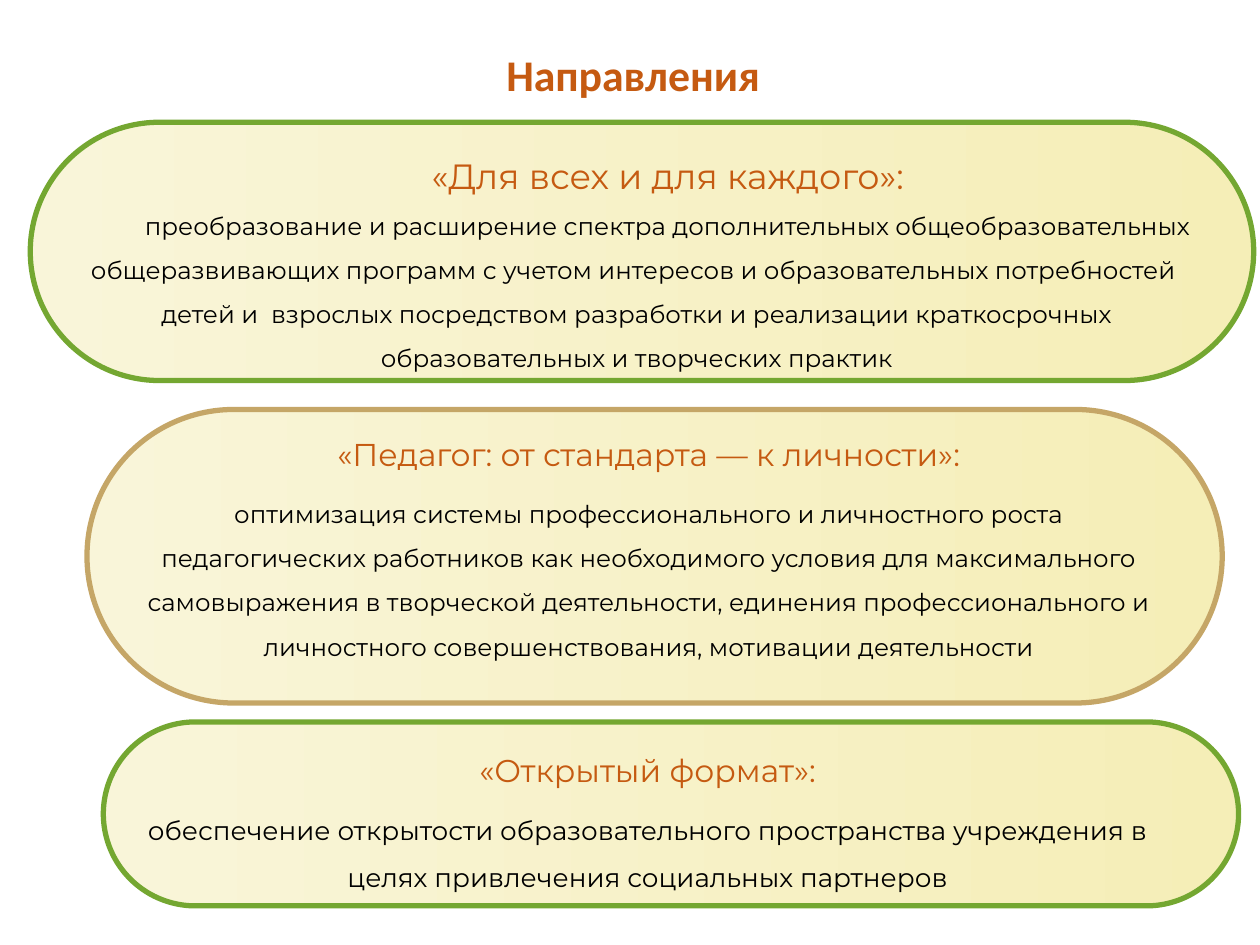
from pptx import Presentation
from pptx import util as u
from pptx.dml.color import RGBColor
from pptx.enum import shapes, text

ORANGE = RGBColor(0xC5, 0x5A, 0x11)
GREEN = RGBColor(0x74, 0xA7, 0x31)
SAND = RGBColor(0xC5, 0xA6, 0x67)
BLACK = RGBColor(0, 0, 0)
CREAM = RGBColor(0xF9, 0xF5, 0xD9)
YELLOW = RGBColor(0xF5, 0xEE, 0xB7)


class SlideBuilder:
    """Holds the style and the current slide."""

    direction_format = {"name": "Montserrat", "bold": False}
    title_format = {"name": "Calibri", "bold": True, "size": u.Pt(25)}

    def __init__(self, page):
        self.page = page

    def place(self, box, area):
        for side, value in zip(("left", "top", "width", "height"), area):
            setattr(box, side, u.Inches(value))

    def fill_paragraph(self, para, words, color, spacing, formats):
        para.alignment = text.PP_ALIGN.CENTER
        para.line_spacing = spacing
        span = para.add_run()
        span.text = words
        for name, value in formats.items():
            setattr(span.font, name, value)
        span.font.color.rgb = color

    def title(self, words, area):
        box = self.page.shapes.title
        self.place(box, area)
        frame = box.text_frame
        frame.vertical_anchor = text.MSO_ANCHOR.MIDDLE
        frame.auto_size = text.MSO_AUTO_SIZE.NONE
        self.fill_paragraph(frame.paragraphs[0], words, ORANGE, 0.9,
                            self.title_format)

    def capsule(self, area, line_color):
        box = self.page.shapes.add_shape(
            shapes.MSO_SHAPE.ROUNDED_RECTANGLE, *map(u.Inches, area))
        box.adjustments[0] = 0.5
        box.shadow.inherit = False
        box.fill.gradient()
        box.fill.gradient_angle = 0
        for stop, color in zip(box.fill.gradient_stops, (CREAM, YELLOW)):
            stop.color.rgb = color
        box.line.color.rgb = line_color
        box.line.width = u.Pt(3)

    def direction(self, area, heading, heading_size, body, body_size, gap, indent):
        box = self.page.shapes.add_textbox(*map(u.Inches, area))
        frame = box.text_frame
        frame.word_wrap = True
        rows = [(heading, heading_size, ORANGE)]
        rows += [(words, body_size, BLACK) for words in body]
        for index, (words, size, color) in enumerate(rows):
            para = frame.add_paragraph() if index else frame.paragraphs[0]
            if index == 1 and gap:
                para.space_before = u.Pt(gap)
            if indent:
                para._p.get_or_add_pPr().set("indent", str(u.Inches(indent)))
            self.fill_paragraph(para, words, color, 1.5,
                                {**self.direction_format, "size": u.Pt(size)})


# Capsule area, outline, text area, heading, size, body, size, gap, indent
DIRECTIONS = [
    ((0.24, 0.97, 9.71, 2.05), GREEN, (0.43, 1.01, 9.25, 2.02),
     "«Для всех и для каждого»:", 20,
     ["преобразование и расширение спектра дополнительных общеобразовательных "
      "общеразвивающих программ с учетом интересов и образовательных "
      "потребностей  детей и  взрослых посредством разработки и реализации "
      "краткосрочных образовательных и творческих практик"], 14, 0, 0.49),
    ((0.69, 3.25, 9.01, 2.33), SAND, (0.58, 3.25, 9.14, 2.07),
     "«Педагог: от стандарта — к личности»:", 18,
     ["оптимизация системы профессионального и личностного роста",
      "педагогических работников как необходимого условия для максимального "
      "самовыражения в творческой деятельности, единения профессионального и "
      "личностного совершенствования, мотивации деятельности"], 14, 7, 0),
    ((0.82, 5.73, 9.01, 1.46), GREEN, (1.05, 5.76, 8.18, 1.35),
     "«Открытый формат»:", 18,
     ["обеспечение открытости образовательного пространства учреждения "
      "в целях привлечения социальных партнеров"], 15, 5.5, 0),
]


def main():
    deck = Presentation()
    deck.slide_width, deck.slide_height = u.Inches(10), u.Inches(7.5)
    builder = SlideBuilder(deck.slides.add_slide(deck.slide_layouts[5]))

    # Title
    builder.title("Направления", (0.73, 0.25, 8.59, 0.73))

    # Capsules behind, then their texts
    for area, outline, *_ in DIRECTIONS:
        builder.capsule(area, outline)
    for _, _, *content in DIRECTIONS:
        builder.direction(*content)

    deck.save("out.pptx")


if __name__ == "__main__":
    main()
